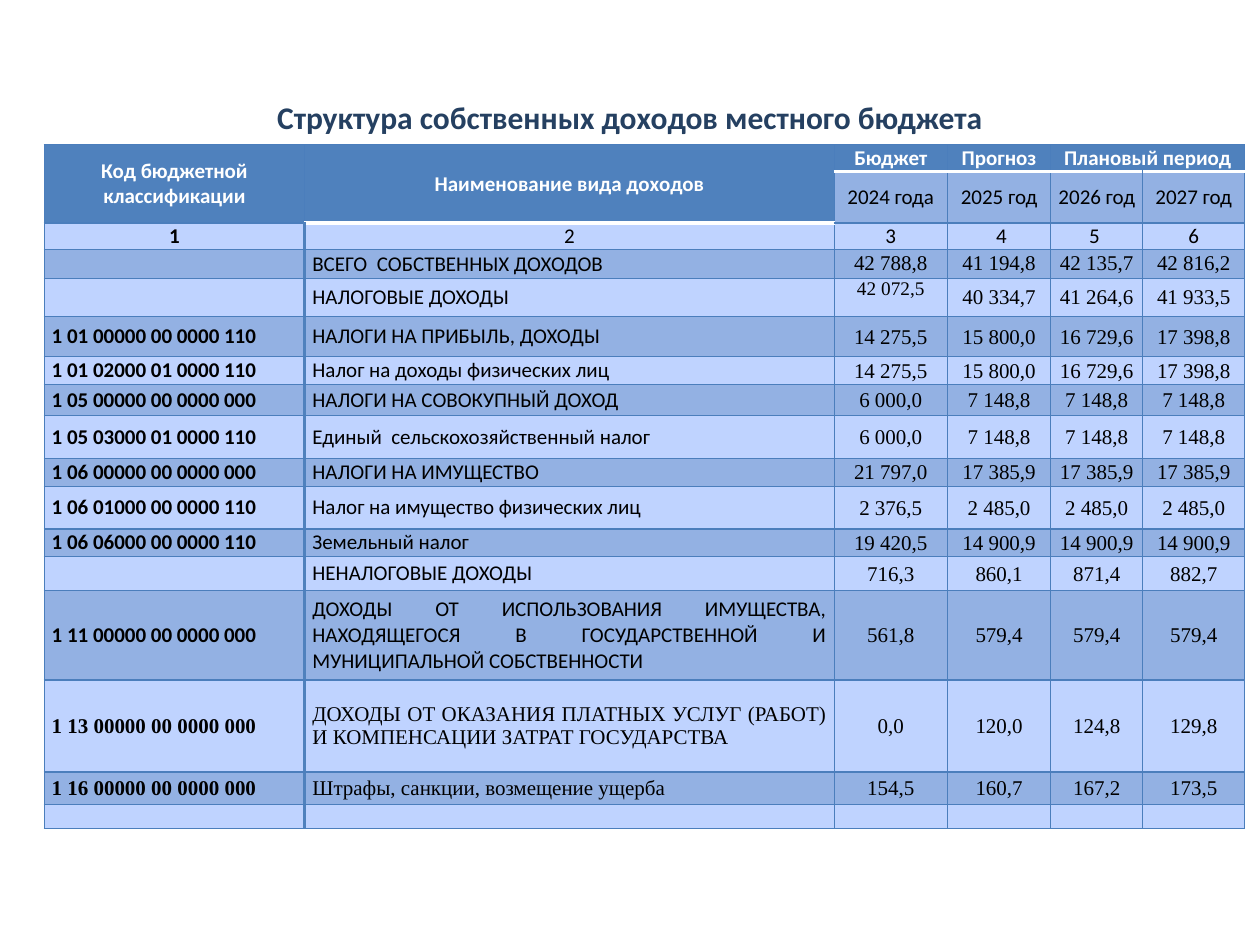
from lxml.etree import SubElement as Sub
from pptx import Presentation
from pptx.dml.color import RGBColor as RGB
from pptx.enum.text import MSO_ANCHOR as Anchor, PP_ALIGN as Align
from pptx.oxml.ns import qn
from pptx.util import Inches, Pt

NAVY = RGB(0x25, 0x40, 0x61)
HEAD = RGB(0x4F, 0x81, 0xBD)
EDGE = RGB(0x4B, 0x7E, 0xBC)
DARK = RGB(0x93, 0xB1, 0xE3)
PALE = RGB(0xBF, 0xD3, 0xFF)
WHITE = RGB(0xFF, 0xFF, 0xFF)
BLACK = RGB(0x00, 0x00, 0x00)
SANS, SERIF = "Calibri", "Times New Roman"

COLS = [2.07, 4.2, 0.9, 0.82, 0.73, 0.81]
HEIGHTS = [0.21, 0.41, 0.21, 0.23, 0.3, 0.32, 0.22, 0.25, 0.34,
           0.22, 0.34, 0.22, 0.27, 0.71, 0.73, 0.26, 0.19]
ROWS = [
    ("Код бюджетной классификации", "Наименование вида доходов",
     "Бюджет", "Прогноз", "Плановый период", ""),
    ("", "", "2024 года", "2025 год", "2026 год", "2027 год"),
    ("1", "2", "3", " 4", "5 ", "6"),
    ("", "ВСЕГО  СОБСТВЕННЫХ ДОХОДОВ",
     "42 788,8", "41 194,8", "42 135,7", "42 816,2"),
    ("", "НАЛОГОВЫЕ ДОХОДЫ",
     "42 072,5", "40 334,7", "41 264,6", "41 933,5"),
    ("1 01 00000 00 0000 110", "НАЛОГИ НА ПРИБЫЛЬ, ДОХОДЫ",
     "14 275,5", "15 800,0", "16 729,6", "17 398,8"),
    ("1 01 02000 01 0000 110", "Налог на доходы физических лиц",
     "14 275,5", "15 800,0", "16 729,6", "17 398,8"),
    ("1 05 00000 00 0000 000", "НАЛОГИ НА СОВОКУПНЫЙ ДОХОД",
     "6 000,0", "7 148,8", "7 148,8", "7 148,8"),
    ("1 05 03000 01 0000 110", "Единый  сельскохозяйственный налог",
     "6 000,0", "7 148,8", "7 148,8", "7 148,8"),
    ("1 06 00000 00 0000 000", "НАЛОГИ НА ИМУЩЕСТВО",
     "21 797,0", "17 385,9", "17 385,9", "17 385,9"),
    ("1 06 01000 00 0000 110", "Налог на имущество физических лиц",
     "2 376,5", "2 485,0", "2 485,0", "2 485,0"),
    ("1 06 06000 00 0000 110", "Земельный налог",
     "19 420,5", "14 900,9", "14 900,9", "14 900,9"),
    ("", "НЕНАЛОГОВЫЕ ДОХОДЫ", "716,3", "860,1", "871,4", "882,7"),
    ("1 11 00000 00 0000 000",
     "ДОХОДЫ ОТ ИСПОЛЬЗОВАНИЯ ИМУЩЕСТВА, НАХОДЯЩЕГОСЯ В "
     "ГОСУДАРСТВЕННОЙ И МУНИЦИПАЛЬНОЙ СОБСТВЕННОСТИ",
     "561,8", "579,4", "579,4", "579,4"),
    ("1 13 00000 00 0000 000",
     "ДОХОДЫ ОТ ОКАЗАНИЯ ПЛАТНЫХ УСЛУГ (РАБОТ) И КОМПЕНСАЦИИ ЗАТРАТ "
     "ГОСУДАРСТВА", "0,0", "120,0", "124,8", "129,8"),
    ("1 16 00000 00 0000 000", "Штрафы, санкции, возмещение ущерба",
     "154,5", "160,7", "167,2", "173,5"),
    ("",) * 6,
]


def write(part, text, size, font, color, bold, align):
    """Put one formatted paragraph into a text frame."""
    part.text = text
    par = part.paragraphs[0]
    par.alignment = align
    for run in par.runs:
        run.font.size = Pt(size)
        run.font.name = font
        run.font.bold = bold
        run.font.color.rgb = color
    if not text:
        Sub(par._p, qn("a:endParaRPr"), sz="900")


def add_line(cell, side, color, width):
    """Draw one border of a cell."""
    line = Sub(cell._tc.get_or_add_tcPr(), qn("a:ln" + side),
               w=str(Pt(width)))
    Sub(Sub(line, qn("a:solidFill")), qn("a:srgbClr"), val=str(color))


def add_edges(cell, row, col):
    """Draw the four borders that belong to a place in the grid."""
    thick = (HEAD, 2)
    thin = (EDGE, 0.75)
    white = (WHITE, 2)
    above = (row, col) == (2, 1) or (row == 1 and col > 1)
    below = (row < 2 and col == 1) or (row == 0 and col > 1)
    add_line(cell, "L", *(thick if row > 1 and col == 1 else thin))
    add_line(cell, "R", *(thick if row > 1 and col == 0 else thin))
    add_line(cell, "T", *(white if above else thin))
    add_line(cell, "B", *(white if below else thin))


def get_fill(row, col):
    """Choose the fill of a cell."""
    if row == 0 or (row == 1 and col < 2):
        return HEAD
    return DARK if row % 2 else PALE


def set_cell(cell, row, col, text):
    """Fill, border and write one cell."""
    top = row == 0
    tight = 5 <= row <= 13 and col > 1
    high = (row, col) == (4, 2)
    low = row == 2 or (top and col > 2)
    serif = row > 2 and (col > 1 or row > 13)
    left = row > 2 and col < 2
    side = 0.01 if tight else 0.07 if high else 0.06
    add_edges(cell, row, col)
    cell.fill.solid()
    cell.fill.fore_color.rgb = get_fill(row, col)
    cell.margin_left = cell.margin_right = Inches(side)
    cell.margin_top = Inches(0.01 if tight else 0)
    cell.margin_bottom = Inches(0)
    cell.vertical_anchor = (Anchor.TOP if high else
                            Anchor.BOTTOM if low else Anchor.MIDDLE)
    write(cell.text_frame, text, 11 if high else 12,
          SERIF if serif else SANS, WHITE if top else BLACK,
          top or col == 0, Align.JUSTIFY if left else Align.CENTER)


def add_title(slide, text):
    """Add the centred heading."""
    box = slide.shapes.add_textbox(
        Inches(0.5), Inches(0.3), Inches(9), Inches(1.25))
    part = box.text_frame
    part.word_wrap = True
    part.vertical_anchor = Anchor.MIDDLE
    write(part, text, 18, SANS, NAVY, True, Align.CENTER)


def add_grid(slide):
    """Add the table of budget income."""
    table = slide.shapes.add_table(
        len(ROWS), len(COLS), Inches(0.35), Inches(1.15),
        Inches(sum(COLS)), Inches(sum(HEIGHTS))).table
    table.first_row = table.horz_banding = False
    for col, width in enumerate(COLS):
        table.columns[col].width = Inches(width)
    for row, texts in enumerate(ROWS):
        table.rows[row].height = Inches(HEIGHTS[row])
        for col, text in enumerate(texts):
            set_cell(table.cell(row, col), row, col, text)
    for start, end in [((0, 0), (1, 0)), ((0, 1), (1, 1)), ((0, 4), (0, 5))]:
        table.cell(*start).merge(table.cell(*end))


def main():
    """Build and save the slide."""
    deck = Presentation()
    deck.slide_width, deck.slide_height = Inches(10), Inches(7.5)
    slide = deck.slides.add_slide(deck.slide_layouts[6])
    add_title(slide, "Структура собственных доходов местного бюджета")
    add_grid(slide)
    deck.save("out.pptx")


if __name__ == "__main__":
    main()
